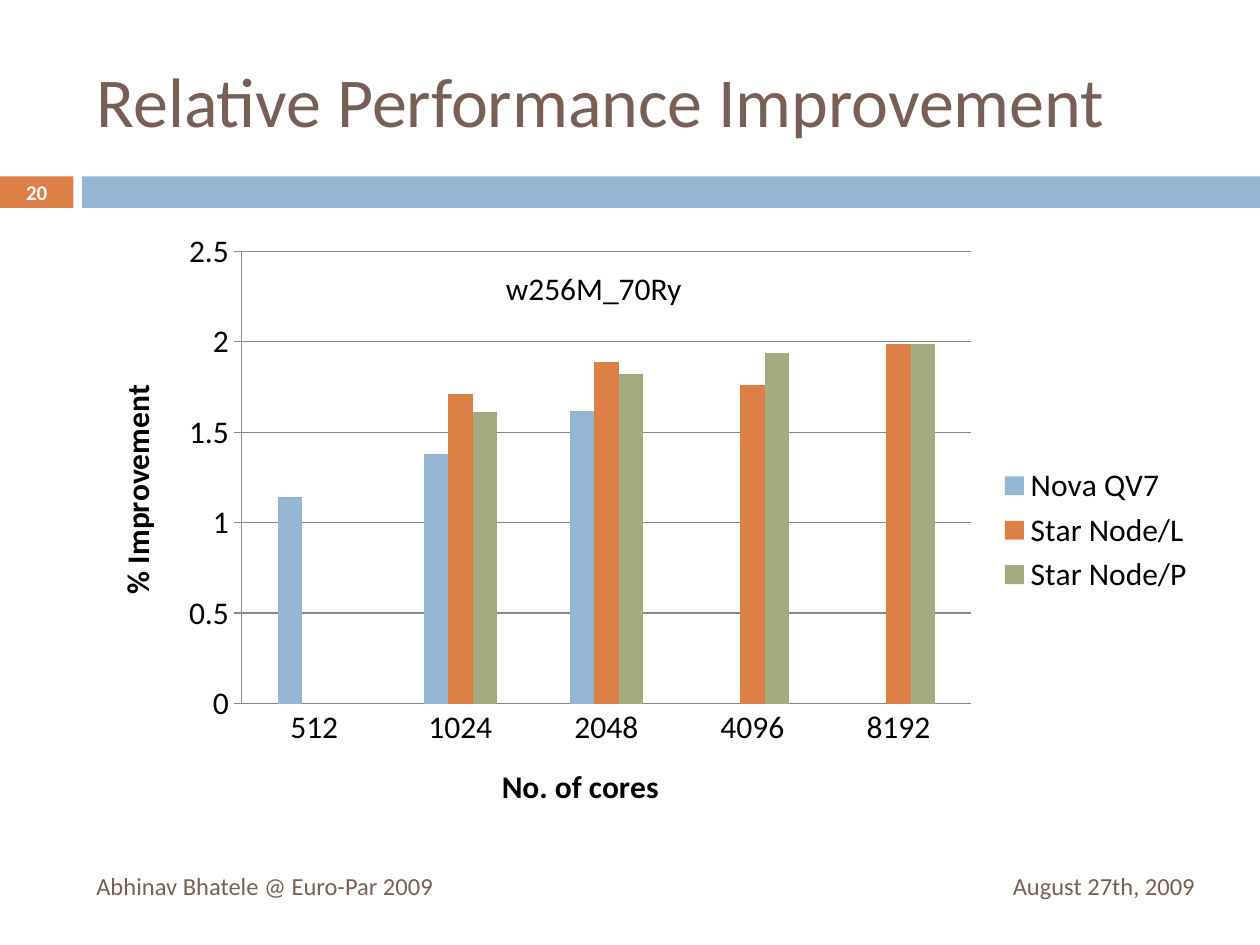
import pptx
import pptx.chart.data
import pptx.dml.color
import pptx.enum.chart
import pptx.enum.shapes
import pptx.enum.text
import pptx.oxml
import pptx.oxml.ns
import pptx.util

Pt = pptx.util.Pt
ALIGN = pptx.enum.text.PP_ALIGN
ANCHOR = pptx.enum.text.MSO_ANCHOR
TICK = pptx.enum.chart.XL_TICK_MARK

FONT = "Calibri"
BROWN, BLUE, ORANGE, GREEN = "775F55", "94B6D2", "DD8047", "A5AB81"
BLACK, WHITE, GRAY = "000000", "FFFFFF", "888888"
LEFT, WIDTH = 48, 642

CORES = ["512", "1024", "2048", "4096", "8192"]
MACHINES = [
    ("Nova QV7", BLUE, [1.14, 1.38, 1.62, None, None]),
    ("Star Node/L", ORANGE, [None, 1.71, 1.89, 1.76, 1.99]),
    ("Star Node/P", GREEN, [None, 1.61, 1.82, 1.94, 1.99]),
]
PLOT_LAYOUT = {"x": 0.14, "y": 0.05, "w": 0.65, "h": 0.73}


def color(value):
    return pptx.dml.color.RGBColor.from_string(value)


def set_font(font, size, fill, bold=False):
    for name, value in {"name": FONT, "size": Pt(size), "bold": bold}.items():
        setattr(font, name, value)
    font.color.rgb = color(fill)


def set_text(shape, text, size, fill, align=ALIGN.LEFT, bold=False, anchor=ANCHOR.MIDDLE):
    frame = shape.text_frame
    formats = {"word_wrap": True, "vertical_anchor": anchor,
               "auto_size": pptx.enum.text.MSO_AUTO_SIZE.NONE}
    for name, value in formats.items():
        setattr(frame, name, value)
    para = frame.paragraphs[0]
    para.alignment = align
    span = para.add_run()
    span.text = text
    set_font(span.font, size, fill, bold)


def add_bar(page, left, width, fill):
    bar = page.shapes.add_shape(pptx.enum.shapes.MSO_SHAPE.RECTANGLE,
                                Pt(left), Pt(100.8), Pt(width), Pt(18))
    bar.shadow.inherit = False
    bar.fill.solid()
    bar.fill.fore_color.rgb = color(fill)
    bar.line.fill.background()
    return bar


def add_label(page, frame, text, size, fill, **formats):
    box = page.shapes.add_textbox(*map(Pt, frame))
    set_text(box, text, size, fill, **formats)


def set_title(page, text):
    title = page.shapes.title
    frame = {"left": LEFT, "top": 18, "width": WIDTH, "height": 78}
    for name, value in frame.items():
        setattr(title, name, Pt(value))
    set_text(title, text, 40, BROWN)


def set_axis(axis, title, tick):
    formats = {"major_tick_mark": tick, "minor_tick_mark": TICK.NONE, "has_title": True}
    for name, value in formats.items():
        setattr(axis, name, value)
    span = axis.axis_title.text_frame.paragraphs[0].add_run()
    span.text = title
    set_font(span.font, 18, BLACK, bold=True)
    axis.format.line.color.rgb = color(GRAY)


def place_plot(chart):
    """Fix the inner plot area as fractions of the chart frame."""
    qn = pptx.oxml.ns.qn
    plot_area = chart.plots[0]._element.getparent()
    for old in plot_area.findall(qn("c:layout")):
        plot_area.remove(old)
    values = {"layoutTarget": "inner", "xMode": "edge", "yMode": "edge", **PLOT_LAYOUT}
    items = "".join(f'<c:{name} val="{value}"/>' for name, value in values.items())
    plot_area.insert(0, pptx.oxml.parse_xml(
        f'<c:layout {pptx.oxml.ns.nsdecls("c")}><c:manualLayout>{items}'
        '</c:manualLayout></c:layout>'))


def add_improvement_chart(page):
    data = pptx.chart.data.CategoryChartData()
    data.categories = CORES
    for name, _, values in MACHINES:
        data.add_series(name, values)
    chart = page.shapes.add_chart(
        pptx.enum.chart.XL_CHART_TYPE.COLUMN_CLUSTERED,
        Pt(LEFT), Pt(126), Pt(WIDTH), Pt(354), data).chart
    set_font(chart.font, 18, BLACK)
    chart.has_title = False
    chart.has_legend = True
    chart.legend.position = pptx.enum.chart.XL_LEGEND_POSITION.RIGHT
    chart.legend.include_in_layout = False

    plot = chart.plots[0]
    for name, value in {"gap_width": 300, "overlap": 0, "vary_by_categories": False}.items():
        setattr(plot, name, value)
    for series, (_, fill, _) in zip(plot.series, MACHINES):
        series.format.fill.solid()
        series.format.fill.fore_color.rgb = color(fill)

    set_axis(chart.category_axis, "No. of cores", TICK.NONE)
    axis = chart.value_axis
    set_axis(axis, "% Improvement", TICK.CROSS)
    for name, value in {"minimum_scale": 0, "maximum_scale": 2.5, "major_unit": 0.5}.items():
        setattr(axis, name, value)
    axis.major_gridlines.format.line.color.rgb = color(GRAY)
    place_plot(chart)


def main():
    deck = pptx.Presentation()
    deck.slide_width, deck.slide_height = Pt(720), Pt(540)
    page = deck.slides.add_slide(deck.slide_layouts[5])
    number_bar = add_bar(page, 0, 42, ORANGE)
    set_text(number_bar, "20", 12, WHITE, align=ALIGN.CENTER, bold=True)
    add_bar(page, 46.8, 673.2, BLUE)
    set_title(page, "Relative Performance Improvement")
    add_label(page, (480, 492, 210, 28.8), "August 27th, 2009", 14, BROWN, align=ALIGN.RIGHT)
    add_label(page, (LEFT, 492, 427, 28.8), "Abhinav Bhatele @ Euro-Par 2009", 14, BROWN)
    add_improvement_chart(page)
    add_label(page, (282, 150, 132, 28.8), "w256M_70Ry", 18, BLACK, anchor=ANCHOR.TOP)
    deck.save("out.pptx")


if __name__ == "__main__":
    main()
